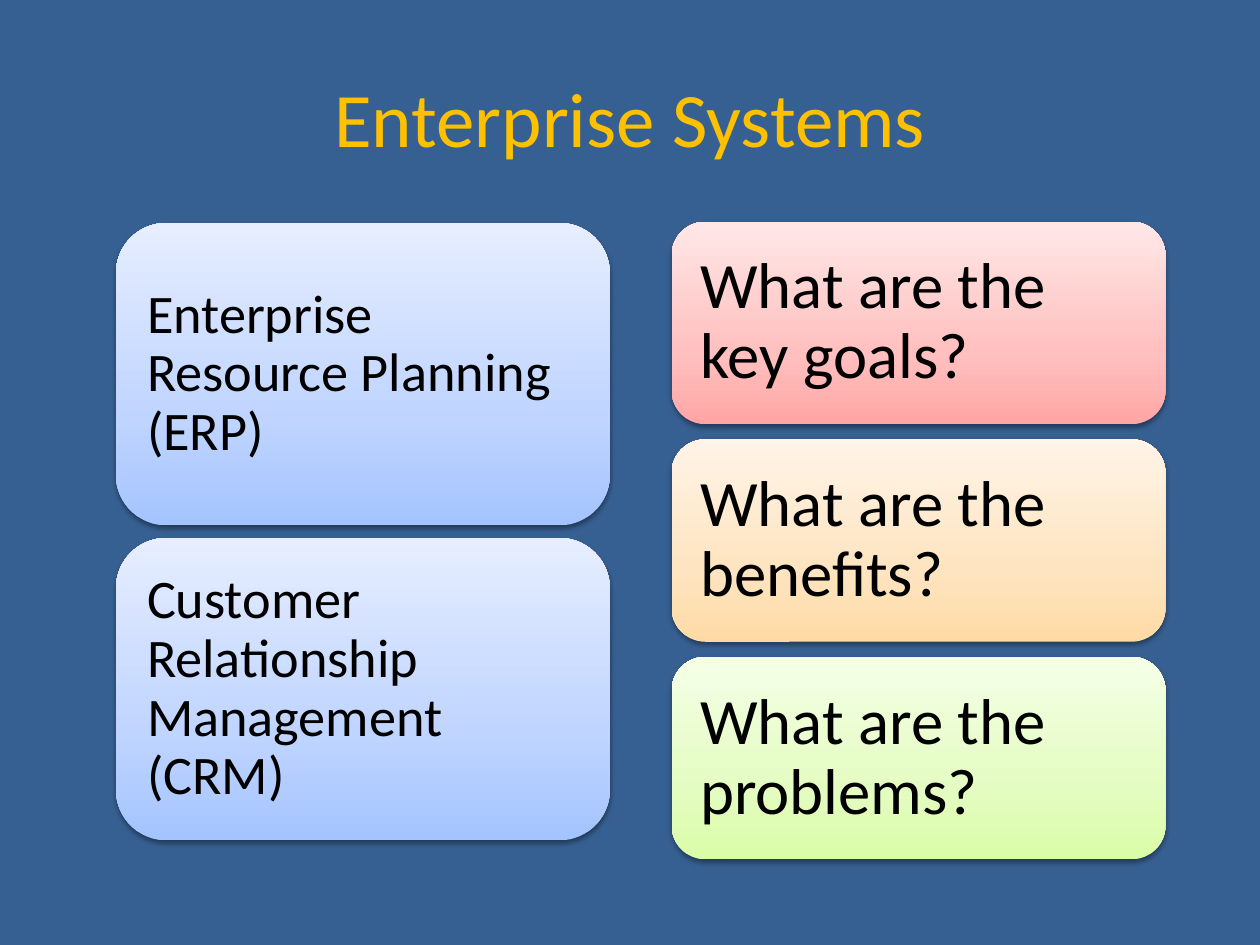
from lxml.etree import SubElement
from pptx import Presentation
from pptx.dml.color import RGBColor
from pptx.enum.shapes import MSO_SHAPE
from pptx.enum.text import MSO_ANCHOR, PP_ALIGN
from pptx.oxml.ns import qn
from pptx.util import Inches, Pt

FONT = "Calibri"
COLORS = {"background": "376092", "title": "FFC000", "text": "000000", "shadow": "000000"}
GRADIENTS = {
    "blue": ("A4C4FF", "BFD4FF", "E6EEFF"),
    "red": ("FFA6A5", "FFC0BF", "FFE7E7"),
    "orange": ("FFDAA5", "FEE4C0", "FFF4E7"),
    "green": ("DAFDA7", "E4FCC2", "F5FFE7"),
}
STOPS = (0, 35, 100)
SYSTEMS = [
    ("Enterprise Resource Planning (ERP)", "blue"),
    ("Customer Relationship Management (CRM)", "blue"),
]
QUESTIONS = [
    ("What are the key goals?", "red"),
    ("What are the benefits?", "orange"),
    ("What are the problems?", "green"),
]


def set_text(tf, text, size, color):
    tf.word_wrap = True
    tf.vertical_anchor = MSO_ANCHOR.MIDDLE
    tf.text = text
    p = tf.paragraphs[0]
    font = p.runs[0].font
    font.name, font.size = FONT, Pt(size)
    font.color.rgb = RGBColor.from_string(COLORS[color])
    return p


def set_gradient(sp, colors):
    """Fill from bottom to top through three colours."""
    sp.fill.gradient()
    sp.fill.gradient_angle = 90
    stops = sp._element.spPr.find(".//" + qn("a:gsLst"))
    stops.clear()
    for pos, color in zip(STOPS, colors):
        gs = SubElement(stops, qn("a:gs"), pos=str(pos * 1000))
        SubElement(gs, qn("a:srgbClr"), val=color)


def set_shadow(sp):
    sp.shadow.inherit = False
    effects = sp._element.spPr.find(qn("a:effectLst"))
    shadow = SubElement(effects, qn("a:outerShdw"), blurRad=str(Pt(3.1)), dist=str(Pt(1.6)),
                        dir="5400000", rotWithShape="0")
    color = SubElement(shadow, qn("a:srgbClr"), val=COLORS["shadow"])
    SubElement(color, qn("a:alpha"), val="38000")


def add_title(s, left, top, width, height, text):
    sp = s.shapes.add_textbox(Inches(left), Inches(top), Inches(width), Inches(height))
    set_text(sp.text_frame, text, 44, "title").alignment = PP_ALIGN.CENTER


def add_card_column(s, left, top, width, height, cards, gap, size, inset):
    """Stack equal rounded cards in the given box."""
    card_height = (height - gap * (len(cards) - 1)) / len(cards)
    for i, (text, gradient) in enumerate(cards):
        sp = s.shapes.add_shape(
            MSO_SHAPE.ROUNDED_RECTANGLE, Inches(left), Inches(top + i * (card_height + gap)),
            Inches(width), Inches(card_height))
        set_gradient(sp, GRADIENTS[gradient])
        sp.line.fill.background()
        set_shadow(sp)
        tf = sp.text_frame
        tf.margin_left = tf.margin_right = tf.margin_top = tf.margin_bottom = Inches(inset)
        p = set_text(tf, text, size, "text")
        p.alignment = PP_ALIGN.LEFT
        p.line_spacing = 0.9


def main():
    prs = Presentation()
    prs.slide_width, prs.slide_height = Inches(10), Inches(7.5)
    s = prs.slides.add_slide(prs.slide_layouts[6])
    s.background.fill.solid()
    s.background.fill.fore_color.rgb = RGBColor.from_string(COLORS["background"])
    add_title(s, 0.5, 0.3, 9, 1.25, "Enterprise Systems")
    add_card_column(s, 0.92, 1.77, 3.92, 4.9, SYSTEMS, gap=0.1, size=31, inset=0.13)
    add_card_column(s, 5.33, 1.76, 3.92, 5.06, QUESTIONS, gap=0.12, size=37, inset=0.15)
    prs.save("out.pptx")


if __name__ == "__main__":
    main()
